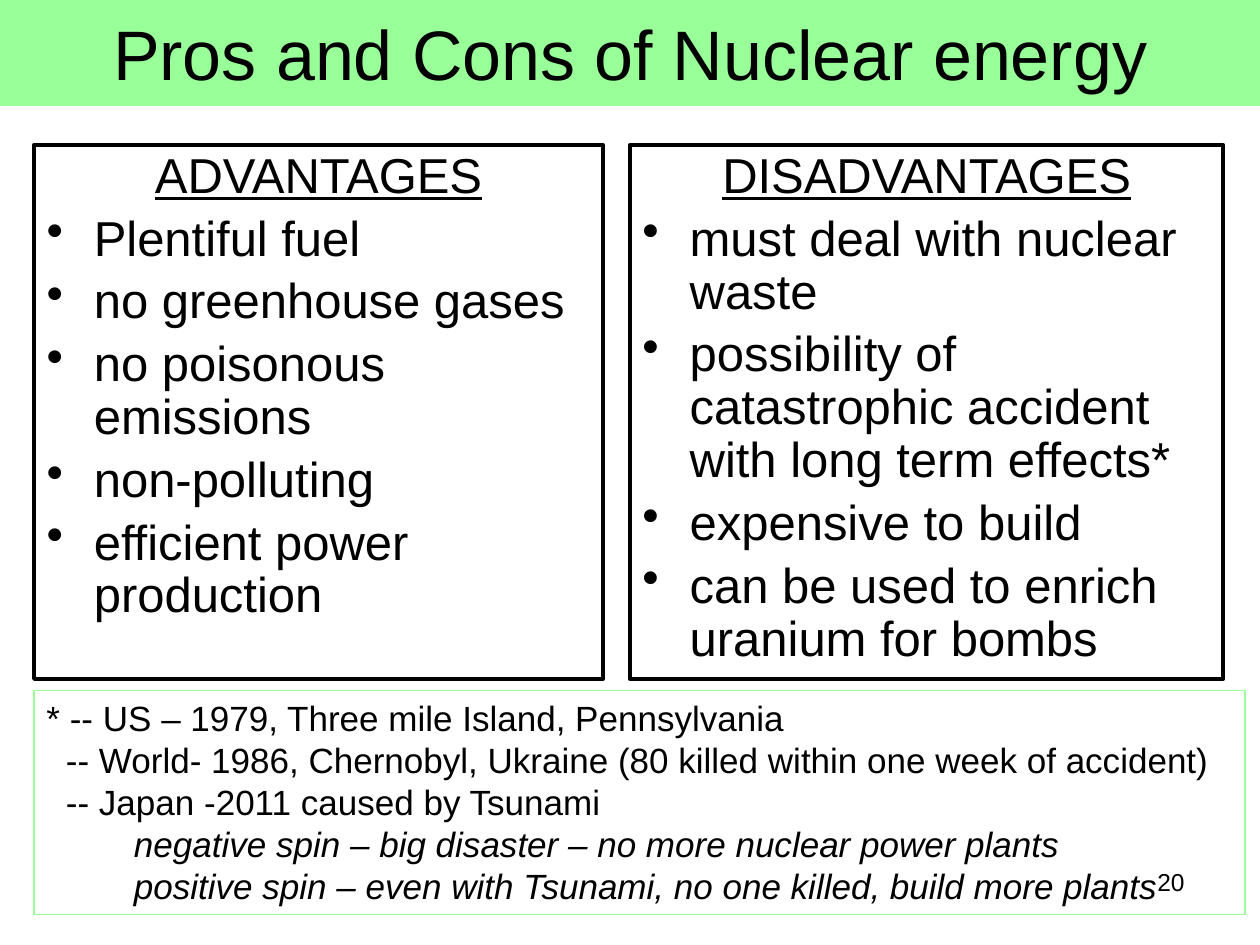
from lxml.etree import SubElement
from pptx import Presentation
from pptx.dml.color import RGBColor
from pptx.enum.shapes import MSO_SHAPE
from pptx.enum.text import MSO_ANCHOR, PP_ALIGN
from pptx.oxml.ns import qn
from pptx.util import Pt

BLACK = RGBColor(0, 0, 0)
GREEN = RGBColor(0x99, 0xFF, 0x99)


def add_box(left, top, width, height, fill=None, line=None, weight=0):
    box = page.shapes.add_shape(MSO_SHAPE.RECTANGLE, Pt(left), Pt(top), Pt(width), Pt(height))
    box.shadow.inherit = False
    if fill is None:
        box.fill.background()
    else:
        box.fill.solid()
        box.fill.fore_color.rgb = fill
    if line is None:
        box.line.fill.background()
    else:
        box.line.color.rgb = line
        box.line.width = Pt(weight)
    box.text_frame.word_wrap = True
    box.text_frame.vertical_anchor = MSO_ANCHOR.TOP
    return box.text_frame


def add_para(frame, text, size, align=PP_ALIGN.LEFT, margin=0, indent=0):
    para = frame.paragraphs[0] if not frame.text else frame.add_paragraph()
    para.text = text
    para.alignment = align
    para.font.name = "Arial"
    para.font.size = Pt(size)
    para.font.color.rgb = BLACK
    properties = para._p.get_or_add_pPr()
    properties.set("marL", str(Pt(margin)))
    properties.set("indent", str(Pt(indent)))
    return para


deck = Presentation()
deck.slide_width, deck.slide_height = Pt(720), Pt(540)
page = deck.slides.add_slide(deck.slide_layouts[6])

title = add_box(0, 0, 720, 60.5, fill=GREEN)
title.vertical_anchor = MSO_ANCHOR.MIDDLE
add_para(title, "Pros and Cons of Nuclear energy", 40, PP_ALIGN.CENTER)

columns = [
    (19.5, 325, "ADVANTAGES", [
        "Plentiful fuel",
        "no greenhouse gases",
        "no poisonous emissions",
        "non-polluting",
        "efficient power production",
    ]),
    (360, 339, "DISADVANTAGES", [
        "must deal with nuclear waste",
        "possibility of catastrophic accident\vwith long term effects*",
        "expensive to build",
        "can be used to enrich uranium for bombs",
    ]),
]
for left, width, heading, points in columns:
    column = add_box(left, 82.75, width, 305.25, line=BLACK, weight=2.25)
    add_para(column, heading, 28, PP_ALIGN.CENTER).font.underline = True
    for point in points:
        para = add_para(column, point, 28, margin=27, indent=-27)
    for para in column.paragraphs:
        para.line_spacing = 0.9
        para.space_before = Pt(5.6)
    for para in column.paragraphs[1:]:
        properties = para._p.get_or_add_pPr()
        bullet = properties.makeelement(qn("a:buChar"), {"char": "•"})
        properties.find(qn("a:defRPr")).addprevious(bullet)

notes = add_box(19.5, 394.5, 692, 128, line=GREEN, weight=0.75)
accidents = (
    "* -- US – 1979, Three mile Island, Pennsylvania\v"
    "-- World- 1986, Chernobyl, Ukraine (80 killed within one week of accident)"
)
add_para(notes, accidents, 20, margin=11.1, indent=-11.1)
add_para(notes, "-- Japan -2011 caused by Tsunami", 20, margin=11.1)
for spin in (
    "negative spin – big disaster – no more nuclear power plants",
    "positive spin – even with Tsunami, no one killed, build more plants",
):
    add_para(notes, spin, 20, margin=50).font.italic = True

number = page.shapes.add_textbox(Pt(516), Pt(492), Pt(168), Pt(37.5)).text_frame
number.word_wrap = True
add_para(number, "20", 14, PP_ALIGN.RIGHT)

deck.save("out.pptx")
